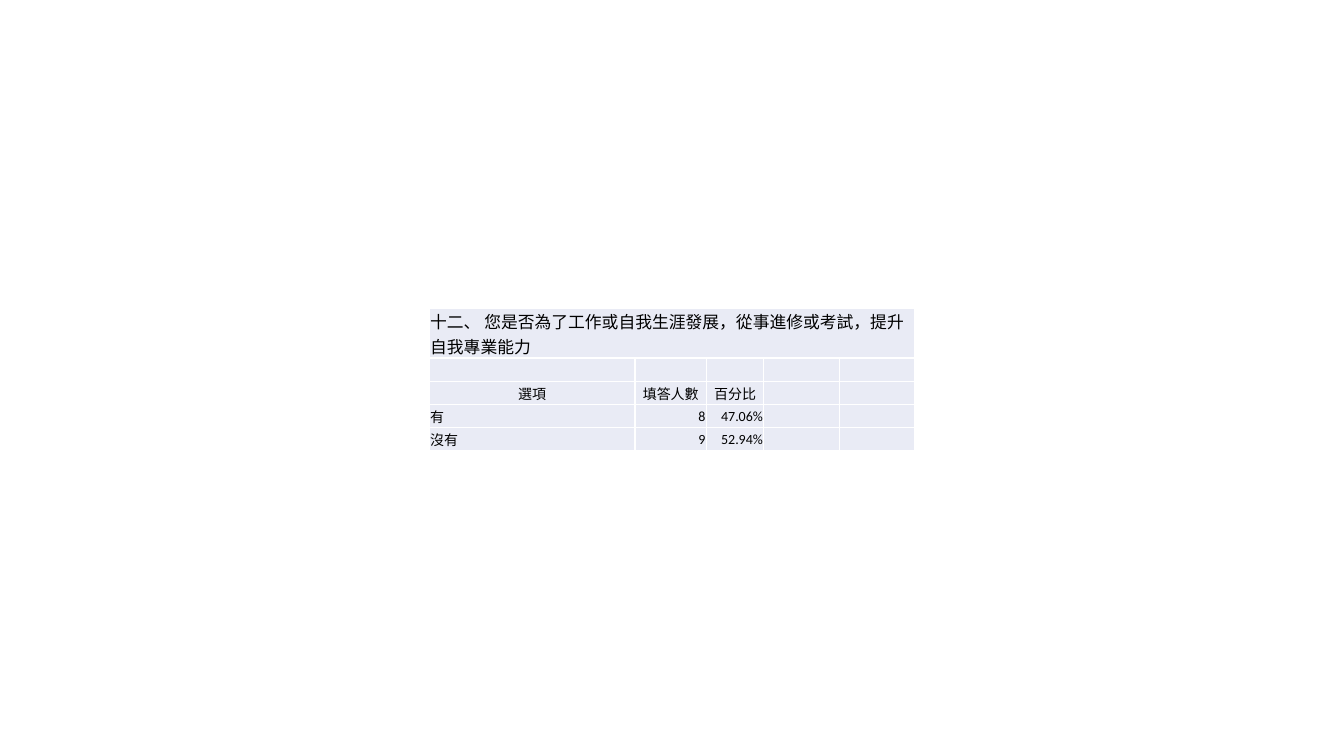
from dataclasses import dataclass
from lxml.etree import SubElement as Sub
from pptx import Presentation
from pptx.dml.color import RGBColor as RGB
from pptx.enum.text import MSO_ANCHOR as Anchor, PP_ALIGN as Align
from pptx.oxml.ns import qn
from pptx.util import Pt

ASK = "十二、 您是否為了工作或自我生涯發展，從事進修或考試，提升自我專業能力"
HEAD = ("選項", "填答人數", "百分比")
DATA = [("有", "8", "47.06%"), ("沒有", "9", "52.94%")]
COLS = (147, 51, 41, 54, 54)
ROWS = (33.12, 16.56, 16.56, 16.56, 16.56)
LEFT, TOP = 306.6, 220.2


@dataclass(frozen=True)
class Theme:
    """Colours and type sizes of the slide."""
    font: str = "Calibri"
    ink: str = "000000"
    fill: str = "E9EBF5"
    line: str = "FFFFFF"
    big: float = 12
    small: float = 10


LOOK = Theme()


def write(cell, text, size=LOOK.small, align=Align.LEFT):
    """Put formatted text in a cell."""
    cell.vertical_anchor = Anchor.MIDDLE
    cell.margin_left = cell.margin_right = cell.margin_top = Pt(0.7)
    cell.margin_bottom = 0
    para = cell.text_frame.paragraphs[0]
    para.alignment = align
    if not text:
        Sub(para._p, qn("a:endParaRPr"), sz=str(int(size * 100)))
        return
    run = para.add_run()
    run.text = text
    run.font.size = Pt(size)
    run.font.name = LOOK.font
    run.font.color.rgb = RGB.from_string(LOOK.ink)


def paint(cell):
    """Give a cell its borders and fill."""
    props = cell._tc.get_or_add_tcPr()
    for side in "LRTB":
        edge = Sub(props, qn(f"a:ln{side}"), w=str(Pt(1)))
        Sub(Sub(edge, qn("a:solidFill")), qn("a:srgbClr"), val=LOOK.line)
    cell.fill.solid()
    cell.fill.fore_color.rgb = RGB.from_string(LOOK.fill)


def main():
    """Build the survey table slide."""
    deck = Presentation()
    deck.slide_width, deck.slide_height = Pt(960), Pt(540)
    slide = deck.slides.add_slide(deck.slide_layouts[6])
    table = slide.shapes.add_table(
        len(ROWS), len(COLS), Pt(LEFT), Pt(TOP), Pt(sum(COLS)), Pt(sum(ROWS))
    ).table
    table.first_row = table.horz_banding = False
    for col, width in zip(table.columns, COLS):
        col.width = Pt(width)
    for row, height in zip(table.rows, ROWS):
        row.height = Pt(height)

    grid = [(ASK,), (), HEAD, *DATA]
    for r, texts in enumerate(grid):
        for c in range(len(COLS)):
            cell = table.cell(r, c)
            text = texts[c] if c < len(texts) else ""
            align = Align.CENTER if texts is HEAD else Align.RIGHT if c else Align.LEFT
            write(cell, text, size=LOOK.small if r else LOOK.big, align=align)
            paint(cell)
    table.cell(0, 0).merge(table.cell(0, len(COLS) - 1))
    deck.save("out.pptx")


if __name__ == "__main__":
    main()
